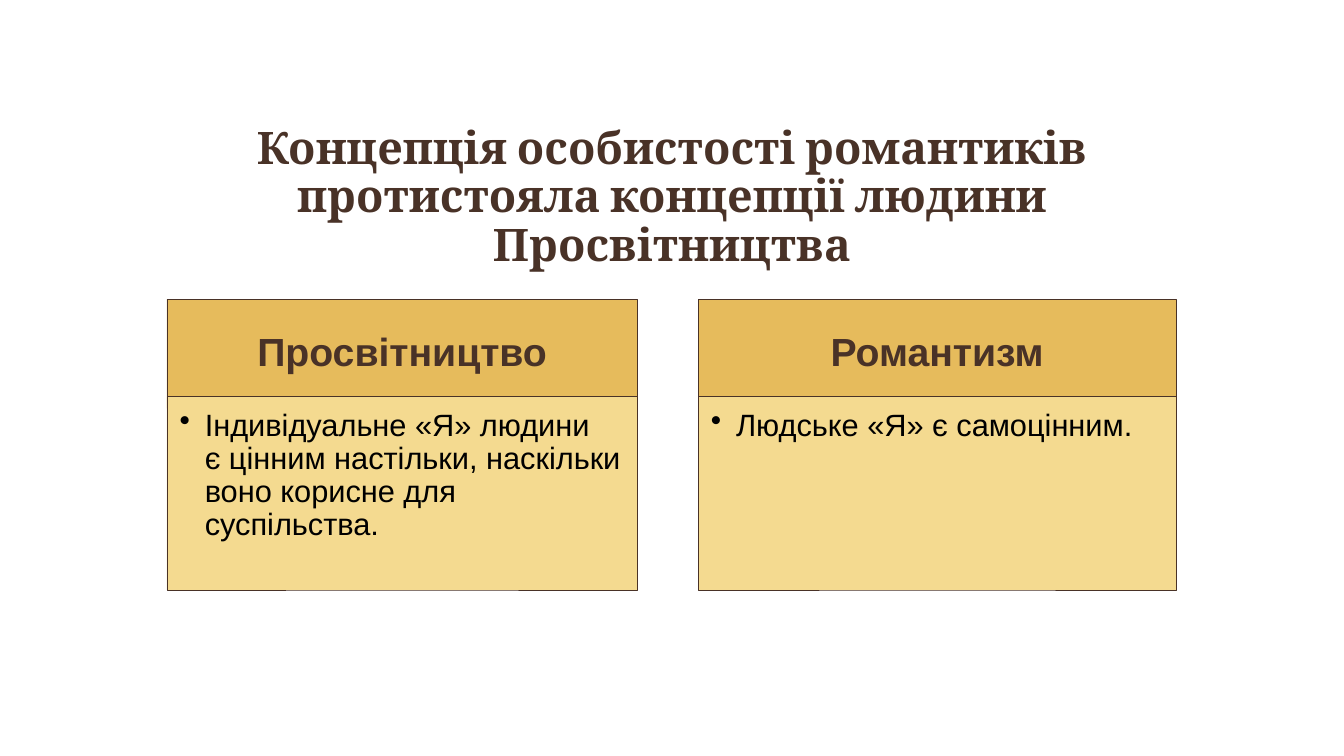
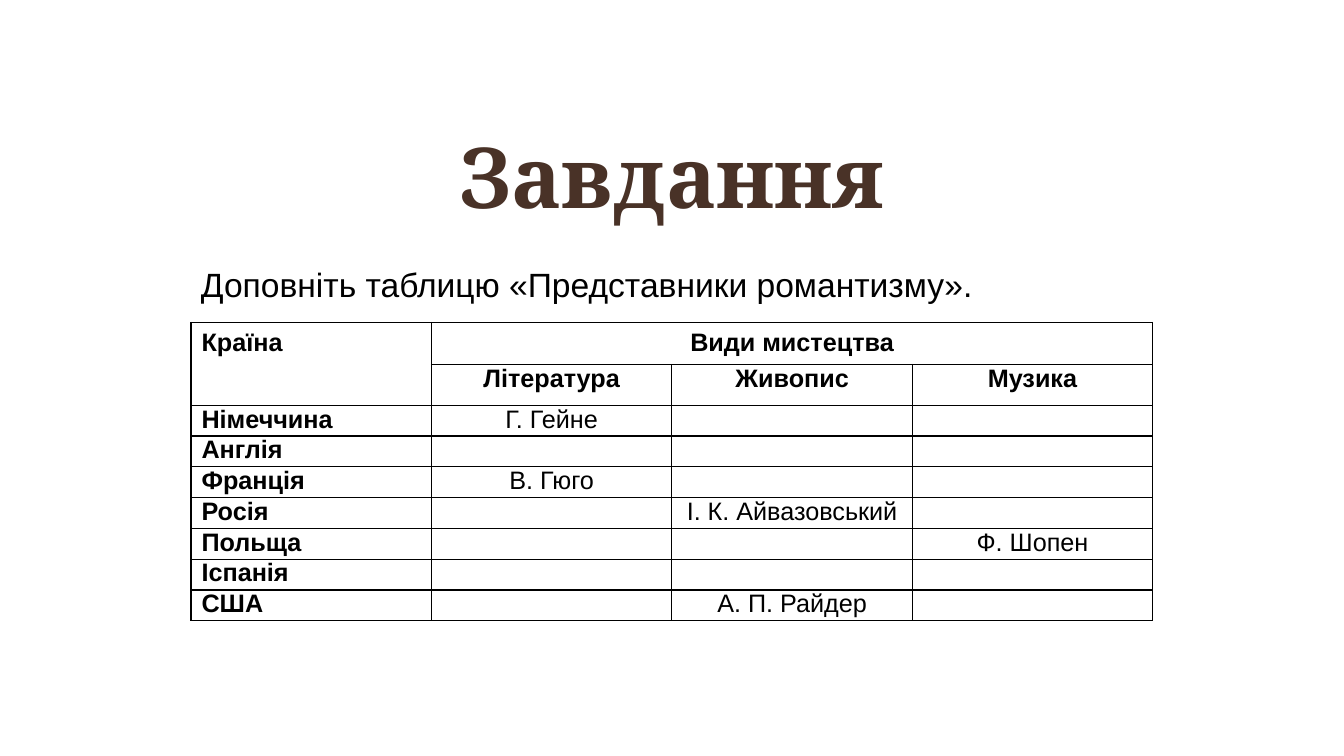
"""Build two slides on the Romantic idea of the person."""
from dataclasses import dataclass

from lxml import etree
from pptx import Presentation, util as u
from pptx.dml.color import RGBColor
from pptx.enum import shapes, text
from pptx.oxml.ns import qn

LEFT, CENTER = text.PP_ALIGN.LEFT, text.PP_ALIGN.CENTER
TOP, MIDDLE = text.MSO_ANCHOR.TOP, text.MSO_ANCHOR.MIDDLE


@dataclass(frozen=True)
class Theme:
    """Colours, fonts and type sizes of the deck."""
    brown: str = "493227"
    gold: str = "E6BB5C"
    sand: str = "F4DA90"
    black: str = "000000"
    serif: str = "Cambria"
    sans: str = "Arial"
    title: int = 32
    big_title: int = 60
    heading: int = 28
    prompt: int = 24
    body: int = 22
    cell: int = 18


T = Theme()


def px(n):
    """Turn pixels into EMU."""
    return u.Emu(n * 9525)


def rgb(color):
    """Turn a hex string into a colour."""
    return RGBColor.from_string(color)


def apply(obj, values):
    """Set each named value on an object."""
    for name, value in values.items():
        setattr(obj, name, value)


def margins(obj, left, top, right, bottom):
    """Set the four text margins of a frame or cell."""
    sides = dict(left=left, top=top, right=right, bottom=bottom)
    apply(obj, {f"margin_{side}": px(n) for side, n in sides.items()})


def write(tf, lines, size, color=T.black, font=T.sans, bold=False,
          align=LEFT, spacing=1.0, bullet=False):
    """Write one paragraph, with a line break between its lines."""
    p = tf.paragraphs[0]
    if bullet:
        pPr = p._p.get_or_add_pPr()
        apply_indent = {"marL": px(24), "indent": px(-24)}
        for name, value in apply_indent.items():
            pPr.set(name, str(value))
        etree.SubElement(pPr, qn("a:buChar")).set("char", "•")
    apply(p, dict(alignment=align, line_spacing=spacing))
    for i, line in enumerate(lines):
        if i:
            p.add_line_break()
        r = p.add_run()
        r.text = line
        apply(r.font, dict(name=font, size=u.Pt(size), bold=bold))
        r.font.color.rgb = rgb(color)


def add_titled_slide(prs, title, size, height):
    """Add a title-only slide and format its title."""
    s = prs.slides.add_slide(prs.slide_layouts[5])
    sp = s.shapes.title
    apply(sp, dict(left=px(115), top=px(119), width=px(1050), height=px(height)))
    tf = sp.text_frame
    apply(tf, dict(word_wrap=True, auto_size=text.MSO_AUTO_SIZE.NONE,
                   vertical_anchor=MIDDLE))
    write(tf, [title], size, T.brown, T.serif, True, CENTER, 0.9)
    return s


def add_panel(s, box, fill, insets, anchor, lines, **style):
    """Add an outlined rectangle with text."""
    sp = s.shapes.add_shape(shapes.MSO_SHAPE.RECTANGLE, *map(px, box))
    sp.shadow.inherit = False
    sp.fill.solid()
    sp.fill.fore_color.rgb = rgb(fill)
    sp.line.color.rgb = rgb(T.brown)
    sp.line.width = u.Pt(0.5)
    tf = sp.text_frame
    apply(tf, dict(word_wrap=True, vertical_anchor=anchor))
    margins(tf, *insets)
    write(tf, lines, spacing=0.9, **style)


def add_card(s, left, width, heading, lines):
    """Add a heading panel with a bulleted panel over its lower edge."""
    add_panel(s, (left, 285, width, 104), T.gold, (21, 12, 21, 12), MIDDLE,
              [heading], size=T.heading, color=T.brown, bold=True, align=CENTER)
    add_panel(s, (left, 378, width, 184), T.sand, (12, 12, 16, 18), TOP,
              lines, size=T.body, bullet=True)


def add_text(s, box, line, size):
    """Add a wrapping text box."""
    tf = s.shapes.add_textbox(*map(px, box)).text_frame
    tf.word_wrap = True
    write(tf, [line], size)


def add_borders(cell):
    """Draw a thin black line on each side of a cell."""
    tcPr = cell._tc.get_or_add_tcPr()
    for i, side in enumerate(("lnL", "lnR", "lnT", "lnB")):
        ln = etree.Element(qn(f"a:{side}"), w=str(u.Pt(1)))
        fill = etree.SubElement(ln, qn("a:solidFill"))
        etree.SubElement(fill, qn("a:srgbClr")).set("val", T.black)
        tcPr.insert(i, ln)


def add_grid(s, left, top, col_width, heights, rows):
    """Add a ruled table with a two-row head."""
    n_cols = len(rows[0])
    table = s.shapes.add_table(len(rows), n_cols, px(left), px(top),
                               px(col_width * n_cols), px(sum(heights))).table
    apply(table, dict(first_row=False, horz_banding=False))
    for col in table.columns:
        col.width = px(col_width)
    for i, (height, row) in enumerate(zip(heights, rows)):
        table.rows[i].height = px(height)
        for j, value in enumerate(row):
            cell = table.cell(i, j)
            pad = 0 if i else 6
            margins(cell, 10, pad, 10, pad)
            cell.fill.background()
            add_borders(cell)
            if value:
                write(cell.text_frame, [value], T.cell, bold=i < 2 or j == 0,
                      align=CENTER if j else LEFT)
    table.cell(0, 0).merge(table.cell(1, 0))
    table.cell(0, 1).merge(table.cell(0, n_cols - 1))


def add_concept_slide(prs):
    """Compare the two ideas of the person."""
    s = add_titled_slide(prs, "Концепція особистості романтиків протистояла "
                         "концепції людини Просвітництва", T.title, 140)
    add_card(s, 159, 448, "Просвітництво", [
        "Індивідуальне «Я» людини",
        "є цінним настільки, наскільки воно корисне для суспільства."])
    add_card(s, 665, 455, "Романтизм", ["Людське «Я» є самоцінним."])


def add_task_slide(prs):
    """Show the table to be completed."""
    s = add_titled_slide(prs, "Завдання", T.big_title, 107)
    rows = [
        ("Країна", "Види мистецтва", "", ""),
        ("", "Література", "Живопис", "Музика"),
        ("Німеччина", "Г. Гейне", "", ""),
        ("Англія", "", "", ""),
        ("Франція", "В. Гюго", "", ""),
        ("Росія", "", "І. К. Айвазовський", ""),
        ("Польща", "", "", "Ф. Шопен"),
        ("Іспанія", "", "", ""),
        ("США", "", "А. П. Райдер", ""),
    ]
    heights = [40, 37] + [28] * (len(rows) - 2)
    add_grid(s, 182, 307, 229, heights, rows)
    add_text(s, (182, 247, 916, 48),
             "Доповніть таблицю «Представники романтизму».", T.prompt)


def main():
    """Build and save the deck."""
    prs = Presentation()
    apply(prs, dict(slide_width=px(1280), slide_height=px(720)))
    add_concept_slide(prs)
    add_task_slide(prs)
    prs.save("out.pptx")


if __name__ == "__main__":
    main()
